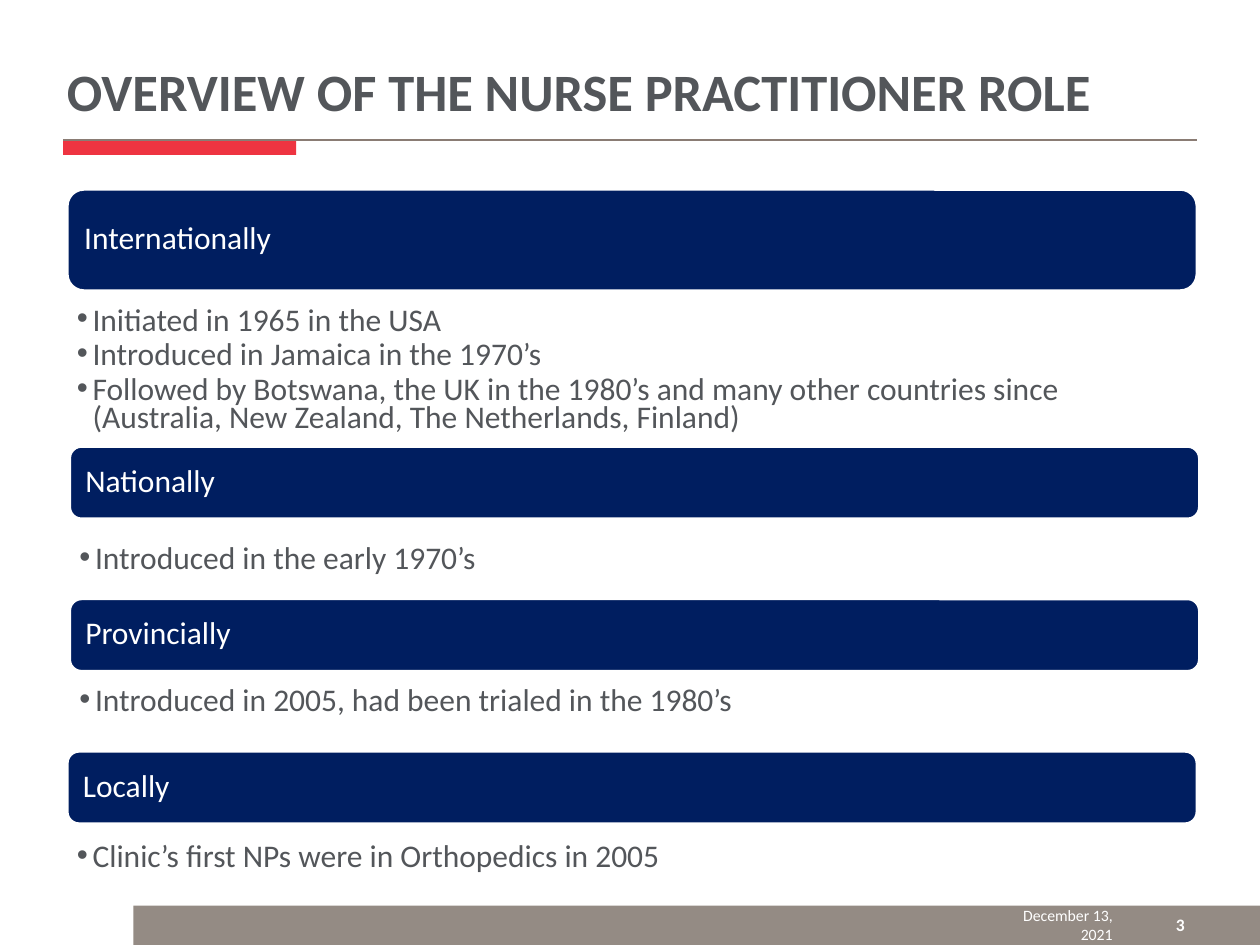
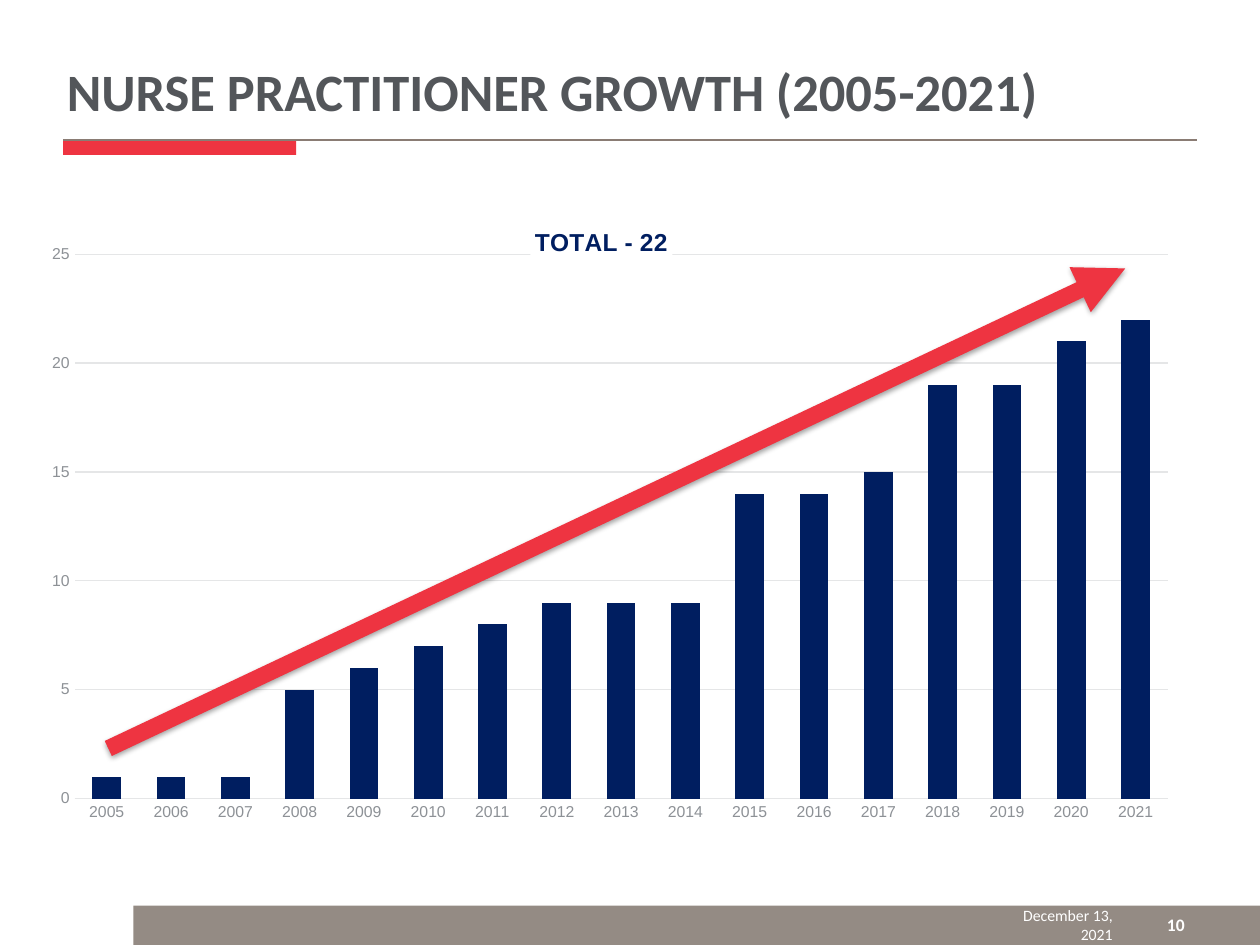
import pptx
import pptx.chart.data
import pptx.dml.color
import pptx.enum.chart
import pptx.enum.shapes
import pptx.enum.text
import pptx.oxml.ns
import pptx.util
from lxml import etree

Pt = pptx.util.Pt
RGBColor = pptx.dml.color.RGBColor
ALIGN = pptx.enum.text.PP_ALIGN
ANCHOR = pptx.enum.text.MSO_ANCHOR
SHAPE = pptx.enum.shapes.MSO_SHAPE
STRAIGHT = pptx.enum.shapes.MSO_CONNECTOR.STRAIGHT
TICK = pptx.enum.chart.XL_TICK_MARK
qn = pptx.oxml.ns.qn

NAVY = RGBColor(0x00, 0x1E, 0x60)
RED = RGBColor(0xEE, 0x34, 0x41)
SLATE = RGBColor(0x53, 0x56, 0x5A)
TAUPE = RGBColor(0x94, 0x8B, 0x84)
RULE = RGBColor(0x8A, 0x7C, 0x74)
GRID = RGBColor(0xE5, 0xE6, 0xE7)
AXIS_TEXT = RGBColor(0x8D, 0x91, 0x96)
WHITE = RGBColor(0xFF, 0xFF, 0xFF)

TITLE_FONT = {"name": "Calibri", "size": Pt(30), "bold": True, "color": SLATE}
HEADING_FONT = {"name": "Calibri", "size": Pt(18), "color": WHITE}
BULLET_FONT = {"name": "Calibri", "size": Pt(18), "color": SLATE}
DATE_FONT = {"name": "Calibri", "size": Pt(9), "color": WHITE}
NUMBER_FONT = {"name": "Calibri", "size": Pt(10), "bold": True, "color": WHITE}
CHART_FONT = {"name": "Arial", "size": Pt(10), "color": SLATE}
AXIS_FONT = {"name": "Arial", "size": Pt(9), "color": AXIS_TEXT}
TOTAL_FONT = {"name": "Arial", "size": Pt(14), "bold": True, "color": NAVY}

DATE = "December 13, 2021"
SECTIONS = [
    ("Internationally", (38.2, 108, 646, 58.3), 64.8, 41.8, [
        "Initiated in 1965 in the USA",
        "Introduced in Jamaica in the 1970’s",
        "Followed by Botswana, the UK in the 1980’s and many other countries since "
        "(Australia, New Zealand, The Netherlands, Finland)"]),
    ("Nationally", (39.6, 254.9, 646, 41.8), 54, 25.2,
     ["Introduced in the early 1970’s"]),
    ("Provincially", (39.6, 342, 646, 41.8), 48.2, 34.6,
     ["Introduced in 2005, had been trialed in the 1980’s"]),
    ("Locally", (38.2, 429.1, 646, 41.8), 50.4, 28.8,
     ["Clinic’s first NPs were in Orthopedics in 2005"]),
]
PRACTITIONERS = [1, 1, 1, 5, 6, 7, 8, 9, 9, 9, 14, 14, 15, 19, 19, 21, 22]


def apply(target, values):
    for key, value in values.items():
        if key == "color":
            target.color.rgb = value
        else:
            setattr(target, key, value)


def fill_solid(part, color):
    part.fill.solid()
    part.fill.fore_color.rgb = color


def add_child(parent, tag, **attributes):
    return etree.SubElement(parent, qn(tag), {k: str(v) for k, v in attributes.items()})


def add_block(slide, kind, box, color):
    block = slide.shapes.add_shape(kind, *map(Pt, box))
    block.shadow.inherit = False
    fill_solid(block, color)
    block.line.fill.background()
    return block


def add_line(slide, start, end, color, width):
    line = slide.shapes.add_connector(STRAIGHT, *map(Pt, start + end))
    apply(line.line, {"color": color, "width": Pt(width)})
    effects = add_child(line._element.spPr, "a:effectLst")
    return line, effects


def write(frame, texts, font, frame_format, paragraph_format, bullet=False):
    apply(frame, {"word_wrap": True, "margin_left": Pt(7.2), "margin_right": Pt(7.2),
                  "margin_top": Pt(3.6), "margin_bottom": Pt(3.6)} | frame_format)
    for index, text in enumerate(texts):
        paragraph = frame.paragraphs[0] if index == 0 else frame.add_paragraph()
        paragraph.text = text
        if bullet:
            properties = paragraph._p.get_or_add_pPr()
            properties.set("marL", str(Pt(9)))
            properties.set("indent", str(-Pt(9)))
            add_child(add_child(properties, "a:buClr"), "a:srgbClr", val=SLATE)
            add_child(properties, "a:buFont", typeface="Arial")
            add_child(properties, "a:buChar", char="•")
            if index:
                paragraph.space_before = Pt(3.6)
        apply(paragraph, paragraph_format)
        apply(paragraph.font if bullet else paragraph.runs[0].font, font)


def add_text(slide, box, texts, font, frame_format, paragraph_format, bullet=False):
    textbox = slide.shapes.add_textbox(*map(Pt, box))
    write(textbox.text_frame, texts, font, frame_format, paragraph_format, bullet)


def add_header(slide, box, title):
    left, top, width, height = box
    rule_top = top + height
    add_block(slide, SHAPE.RECTANGLE, (left, rule_top, 133.2, 8.6), RED)
    add_line(slide, (left, rule_top), (left + width, rule_top), RULE, 1)
    add_text(slide, (left + 2.2, top, 620.6, 58.3), [title], TITLE_FONT,
             {"vertical_anchor": ANCHOR.BOTTOM, "margin_left": 0, "margin_right": Pt(8.6)}, {})


def add_footer(slide, box, number):
    left, top, width, height = box
    add_block(slide, SHAPE.RECTANGLE, box, TAUPE)
    for offset, text_width, text, font in [(493.9, 72.7, DATE, DATE_FONT),
                                           (573.9, 33.8, str(number), NUMBER_FONT)]:
        add_text(slide, (left + offset, top - 3.6, text_width, 28.8), [text], font,
                 {"vertical_anchor": ANCHOR.MIDDLE}, {"alignment": ALIGN.RIGHT})


def add_section(slide, box, heading, body_offset, body_height, bullets):
    left, top, width, height = box
    banner = add_block(slide, SHAPE.ROUNDED_RECTANGLE, box, NAVY)
    apply(banner.line, {"color": WHITE, "width": Pt(2)})
    write(banner.text_frame, [heading], HEADING_FONT, {"vertical_anchor": ANCHOR.MIDDLE},
          {"alignment": ALIGN.LEFT, "line_spacing": 0.85})
    add_text(slide, (left - 1.4, top + body_offset, width, body_height), bullets,
             BULLET_FONT, {}, {"line_spacing": 0.75}, bullet=True)


def set_layout(parent, index, **values):
    for previous in parent.findall(qn("c:layout")):
        parent.remove(previous)
    layout = etree.Element(qn("c:layout"))
    parent.insert(index, layout)
    manual = add_child(layout, "c:manualLayout")
    for key, value in values.items():
        add_child(manual, f"c:{key}", val=value)


def add_growth_chart(slide, box):
    left, top, width, height = box
    data = pptx.chart.data.CategoryChartData()
    data.categories = [str(year) for year in range(2005, 2022)]
    data.add_series("Series 1", PRACTITIONERS)
    chart = slide.shapes.add_chart(
        pptx.enum.chart.XL_CHART_TYPE.COLUMN_CLUSTERED, *map(Pt, box), data).chart
    apply(chart.font, CHART_FONT)
    apply(chart, {"has_legend": False, "has_title": True})
    total = chart.chart_title
    total.text_frame.text = "TOTAL - 22"
    apply(total.text_frame.paragraphs[0].runs[0].font, TOTAL_FONT)
    fill_solid(total.format, WHITE)
    set_layout(total._element, 1, xMode="edge", yMode="edge", x=0.43, y=0.04)

    plot = chart.plots[0]
    apply(plot, {"gap_width": 124, "overlap": -27, "vary_by_categories": False})
    fill_solid(plot.series[0].format, NAVY)
    set_layout(chart._chartSpace.chart.plotArea, 0, layoutTarget="inner", xMode="edge",
               yMode="edge", x=0.028, y=0.091, w=0.964, h=0.859)

    years, counts = chart.category_axis, chart.value_axis
    for axis in (years, counts):
        apply(axis, {"major_tick_mark": TICK.NONE, "minor_tick_mark": TICK.NONE})
        apply(axis.tick_labels.font, AXIS_FONT)
    apply(counts, {"minimum_scale": 0, "maximum_scale": 25, "major_unit": 5,
                   "has_major_gridlines": True})
    counts.format.line.fill.background()
    for line in (years.format.line, counts.major_gridlines.format.line):
        apply(line, {"color": GRID, "width": Pt(0.75)})

    trend, effects = add_line(slide, (left + 37.4, top + 315.4),
                              (left + 618.5, top + 41.1), RED, 9.5)
    add_child(trend.line._get_or_add_ln(), "a:tailEnd", type="triangle")
    shadow = add_child(effects, "a:outerShdw", blurRad=Pt(3.1), dist=Pt(1.6),
                       dir=5400000, rotWithShape=0)
    add_child(add_child(shadow, "a:srgbClr", val="000000"), "a:alpha", val=37000)


def add_framed_slide(deck, title, number):
    slide = deck.slides.add_slide(deck.slide_layouts[6])
    add_footer(slide, (76.3, 517.5, 643.7, 22.5), number)
    add_header(slide, (36, 15.1, 648, 64.8), title)
    return slide


def main():
    deck = pptx.Presentation()
    apply(deck, {"slide_width": Pt(720), "slide_height": Pt(540)})
    overview = add_framed_slide(deck, "OVERVIEW OF THE NURSE PRACTITIONER ROLE", 3)
    for heading, box, body_offset, body_height, bullets in SECTIONS:
        add_section(overview, box, heading, body_offset, body_height, bullets)
    growth = add_framed_slide(deck, "NURSE PRACTITIONER GROWTH (2005-2021)", 10)
    add_growth_chart(growth, (24.5, 112.3, 648, 362.2))
    deck.save("out.pptx")


if __name__ == "__main__":
    main()
